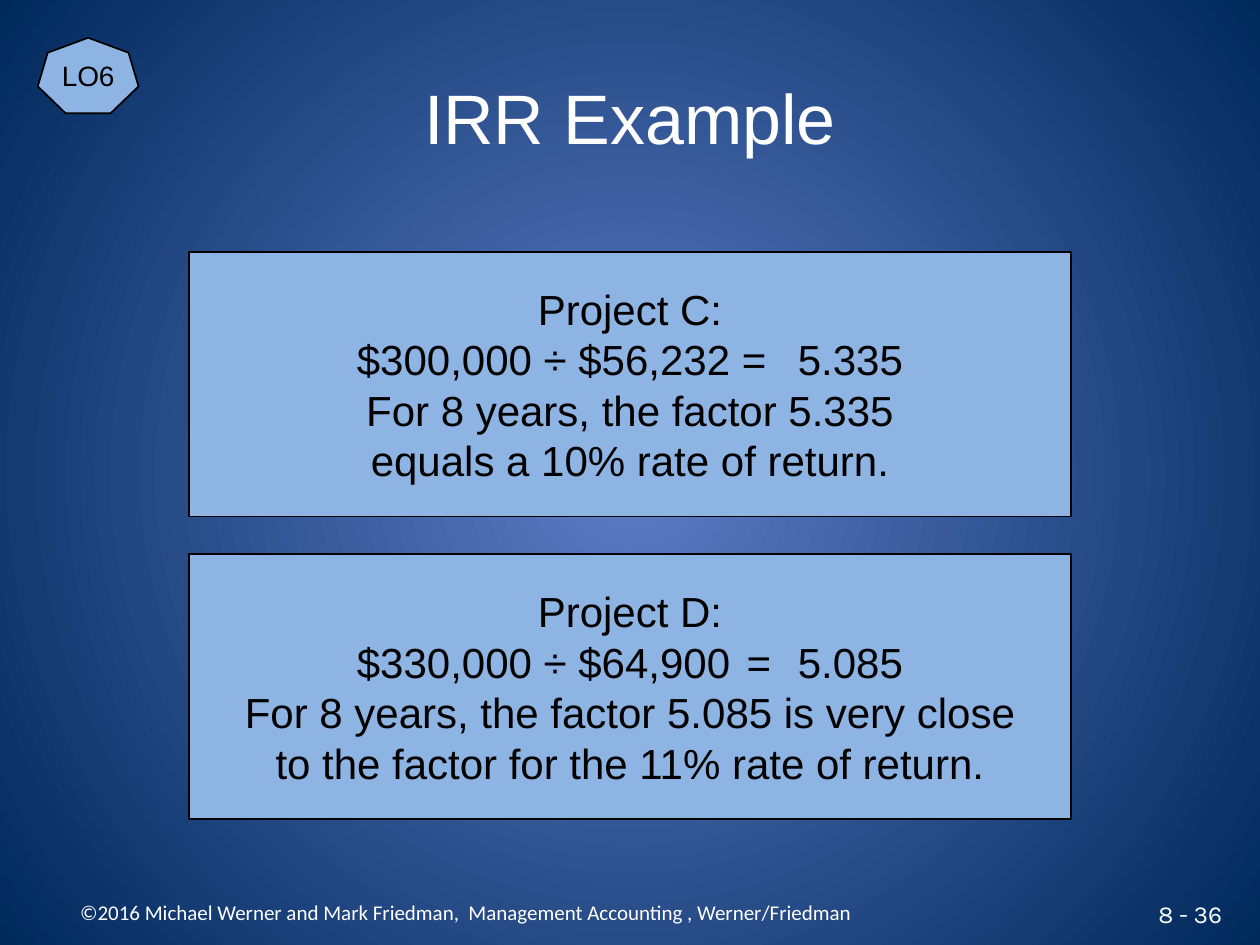
from lxml import etree
from pptx import Presentation
from pptx.dml import color
from pptx.enum import shapes, text
from pptx.oxml import ns
from pptx.util import Inches, Pt

BLACK, WHITE, LIGHT_BLUE = "000000", "FFFFFF", "8EB4E3"
CENTER, LEFT, RIGHT = text.PP_ALIGN.CENTER, text.PP_ALIGN.LEFT, text.PP_ALIGN.RIGHT
MIDDLE, BOTTOM = text.MSO_ANCHOR.MIDDLE, text.MSO_ANCHOR.BOTTOM


def rgb(hex_color):
    return color.RGBColor.from_string(hex_color)


def place(shape, box):
    for name, value in zip(("left", "top", "width", "height"), box):
        setattr(shape, name, Inches(value))


def write(shape, content, size, hex_color, align=CENTER, font="Arial",
          anchor=MIDDLE, wrap=True):
    frame = shape.text_frame
    frame.text = content
    for name, value in {"vertical_anchor": anchor, "word_wrap": wrap}.items():
        setattr(frame, name, value)
    for paragraph in frame.paragraphs:
        paragraph.alignment = align
        for run in paragraph.runs:
            for name, value in {"size": Pt(size), "name": font}.items():
                setattr(run.font, name, value)
            run.font.color.rgb = rgb(hex_color)


def paint_background(slide, center, edge):
    fill = slide.background.fill
    fill.gradient()
    for stop, position, hex_color in zip(fill.gradient_stops, (0, 1), (center, edge)):
        stop.position = position
        stop.color.rgb = rgb(hex_color)
    # Turn the linear gradient into a circular one around the middle
    linear = next(slide.element.iter(ns.qn("a:lin")))
    circle = etree.Element(ns.qn("a:path"), {"path": "circle"})
    etree.SubElement(circle, ns.qn("a:fillToRect"),
                     {side: "50000" for side in "ltrb"})
    linear.getparent().replace(linear, circle)


def add_title(slide, box, content):
    place(slide.shapes.title, box)
    write(slide.shapes.title, content, 40, WHITE)


def add_panel(slide, kind, box, content, size, **options):
    shape = slide.shapes.add_shape(kind, *map(Inches, box))
    shape.shadow.inherit = False
    shape.fill.solid()
    shape.fill.fore_color.rgb = rgb(LIGHT_BLUE)
    shape.line.color.rgb = rgb(BLACK)
    shape.line.width = Pt(1)
    write(shape, content, size, BLACK, **options)


def add_label(slide, box, content, size, **options):
    label = slide.shapes.add_textbox(*map(Inches, box))
    write(label, content, size, WHITE, **options)


def add_projects(slide, box, projects, gap):
    left, top, width, height = box
    panel_height = (height - gap * (len(projects) - 1)) / len(projects)
    for index, content in enumerate(projects):
        panel_top = top + index * (panel_height + gap)
        add_panel(slide, shapes.MSO_SHAPE.RECTANGLE,
                  (left, panel_top, width, panel_height), content, 24, wrap=False)


def main():
    presentation = Presentation()
    presentation.slide_width, presentation.slide_height = Inches(10), Inches(7.5)
    slide = presentation.slides.add_slide(presentation.slide_layouts[5])
    paint_background(slide, "5E7CC5", "00295C")

    # Page number and title
    add_label(slide, (9, 7.1, 0.8, 0.3), "8 - 36", 14,
              align=RIGHT, font="Karla", wrap=False)
    add_title(slide, (0.5, 0.3, 9, 1.25), "IRR Example")

    # Project calculations; \v is a line break within a paragraph
    add_projects(slide, (1.5, 2, 7, 4.5), (
        "Project C:\n$300,000 ÷ $56,232 =\t5.335\n"
        "For 8 years, the factor 5.335\nequals a 10% rate of return.",
        "Project D:\n$330,000 ÷ $64,900\t =\t5.085\v"
        "For 8 years, the factor 5.085 is very close\n"
        "to the factor for the 11% rate of return.",
    ), gap=0.3)

    # Learning objective badge
    add_panel(slide, shapes.MSO_SHAPE.HEPTAGON, (0.3, 0.3, 0.8, 0.6), "LO6", 16,
              anchor=BOTTOM)

    # Copyright line
    add_label(slide, (0.5, 6.98, 7.5, 0.52),
              " ©2016 Michael Werner and Mark Friedman,  Management Accounting , "
              "Werner/Friedman", 12, align=LEFT, font="Calibri")

    presentation.save("out.pptx")


if __name__ == "__main__":
    main()
